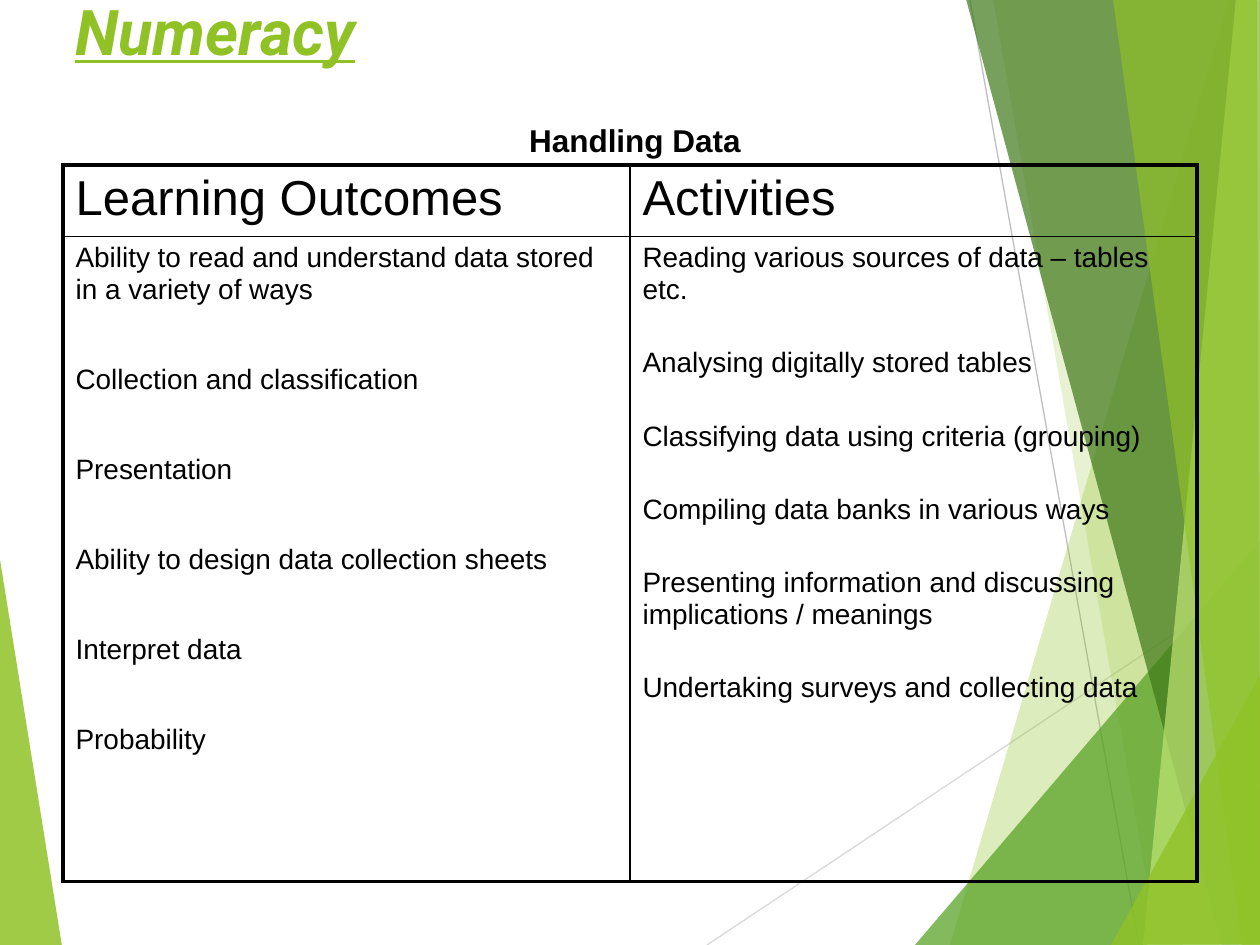
from dataclasses import dataclass

from lxml import etree
from pptx import Presentation
from pptx.dml.color import RGBColor
from pptx.enum.shapes import MSO_CONNECTOR as Connector
from pptx.enum.text import MSO_ANCHOR as Anchor, PP_ALIGN as Align
from pptx.oxml.ns import qn
from pptx.util import Emu, Pt

SCALE = 914400 / 126  # EMU per px


@dataclass(frozen=True)
class Theme:
    lime: str = "90C226"
    green: str = "54A021"
    forest: str = "3F7819"
    pale: str = "C0E474"
    black: str = "000000"
    light_gray: str = "D9D9D9"
    gray: str = "BFBFBF"
    title_font: str = "Roboto"
    body_font: str = "Arial"
    title_size: int = 36
    caption_size: int = 18
    header_size: int = 28
    body_size: int = 16
    thick: float = 2.25
    thin: float = 1
    hairline: float = 0.75


THEME = Theme()

# Facets: fill colour, opacity in percent, corner points in px
LEFT_FACET = (THEME.lime, 85, [(-1, 553), (62, 946), (-1, 945)])
RIGHT_FACETS = [
    (THEME.lime, 30, [(1229, 0), (950, 945), (1262, 946), (1261, 1)]),
    (THEME.lime, 20, [(993, -1), (1158, 945), (1261, 945), (1261, -1)]),
    (THEME.green, 72, [(915, 945), (1260, 541), (1261, 945)]),
    (THEME.forest, 70, [(966, -1), (1222, 945), (1261, 944), (1261, -1)]),
    (THEME.pale, 70, [(1236, -1), (1143, 945), (1261, 945), (1260, -1)]),
    (THEME.lime, 65, [(1113, -1), (1242, 945), (1260, 945), (1257, -1)]),
    (THEME.lime, 80, [(1111, 945), (1261, 674), (1261, 944)]),
]

HEADERS = ["Learning Outcomes", "Activities"]
OUTCOMES = [
    "Ability to read and understand data stored in a variety of ways",
    "Collection and classification",
    "Presentation",
    "Ability to design data collection sheets",
    "Interpret data",
    "Probability",
]
ACTIVITIES = [
    "Reading various sources of data – tables etc.",
    "Analysing digitally stored tables",
    "Classifying data using criteria (grouping)",
    "Compiling data banks in various ways",
    "Presenting information and discussing implications / meanings",
    "Undertaking surveys and collecting data",
]


def px(value):
    return Emu(round(value * SCALE))


def rgb(color):
    return RGBColor.from_string(color)


def set_font(paragraph, name, size, color, **styles):
    font = paragraph.font
    font.name, font.size = name, Pt(size)
    font.color.rgb = rgb(color)
    for style, value in styles.items():
        setattr(font, style, value)


def add_facet(slide, color, opacity, points):
    builder = slide.shapes.build_freeform(*points[0], scale=SCALE)
    builder.add_line_segments(points[1:], close=True)
    shape = builder.convert_to_shape()
    shape.shadow.inherit = False
    shape.line.fill.background()
    shape.fill.solid()
    shape.fill.fore_color.rgb = rgb(color)
    fill_color = next(shape.element.spPr.iter(qn("a:srgbClr")))
    etree.SubElement(fill_color, qn("a:alpha"), val=str(opacity * 1000))


def add_line(slide, start, end, color):
    ends = [px(value) for value in (*start, *end)]
    line = slide.shapes.add_connector(Connector.STRAIGHT, *ends)
    line.line.color.rgb = rgb(color)
    line.line.width = Pt(THEME.hairline)
    etree.SubElement(line.element.spPr, qn("a:effectLst"))


def add_text(slide, box, text, align, *font, **styles):
    shape = slide.shapes.add_textbox(*map(px, box))
    frame = shape.text_frame
    frame.word_wrap = True
    frame.vertical_anchor = Anchor.TOP
    paragraph = frame.paragraphs[0]
    paragraph.text = text
    paragraph.alignment = align
    set_font(paragraph, *font, **styles)


def set_borders(cell, widths):
    """Draw left, right, top and bottom borders, ahead of the cell fill."""
    properties = cell._tc.get_or_add_tcPr()
    for index, (side, width) in enumerate(zip("LRTB", widths)):
        line = etree.Element(qn(f"a:ln{side}"), w=str(Pt(width)))
        fill = etree.SubElement(line, qn("a:solidFill"))
        etree.SubElement(fill, qn("a:srgbClr"), val=THEME.black)
        properties.insert(index, line)


def fill_cell(cell, texts, size, gap=0):
    cell.fill.background()
    frame = cell.text_frame
    for index, text in enumerate(texts):
        paragraph = frame.add_paragraph() if index else frame.paragraphs[0]
        paragraph.text = text
        paragraph.space_before = Pt(gap if index else 0)
        set_font(paragraph, THEME.body_font, size, THEME.black)


def add_outcome_table(slide):
    box = map(px, (63, 165, 1134, 716))
    table = slide.shapes.add_table(2, 2, *box).table
    table.first_row = table.horz_banding = False
    for row, height in zip(table.rows, (71, 645)):
        row.height = px(height)

    columns = [(OUTCOMES, 33.7), (ACTIVITIES, 24.2)]
    for column, (texts, gap) in enumerate(columns):
        fill_cell(table.cell(0, column), [HEADERS[column]], THEME.header_size)
        fill_cell(table.cell(1, column), texts, THEME.body_size, gap)

    # Thick frame around the table, thin rules inside
    edge = (THEME.thick, THEME.thin)
    for row in range(2):
        for column in range(2):
            widths = (edge[column], edge[1 - column], edge[row], edge[1 - row])
            set_borders(table.cell(row, column), widths)


def main():
    presentation = Presentation()
    presentation.slide_width, presentation.slide_height = px(1260), px(945)
    slide = presentation.slides.add_slide(presentation.slide_layouts[6])

    # Background decoration
    add_facet(slide, *LEFT_FACET)
    add_line(slide, (707, 945), (1261, 576), THEME.light_gray)
    add_line(slide, (970, 0), (1139, 945), THEME.gray)
    for facet in RIGHT_FACETS:
        add_facet(slide, *facet)

    # Title, table and its caption
    add_text(slide, (63, -14, 1134, 158), "Numeracy", Align.LEFT,
             THEME.title_font, THEME.title_size, THEME.lime,
             bold=True, italic=True, underline=True)
    add_outcome_table(slide)
    add_text(slide, (382, 115, 506, 50), "Handling Data", Align.CENTER,
             THEME.body_font, THEME.caption_size, THEME.black, bold=True)

    presentation.save("out.pptx")


if __name__ == "__main__":
    main()
